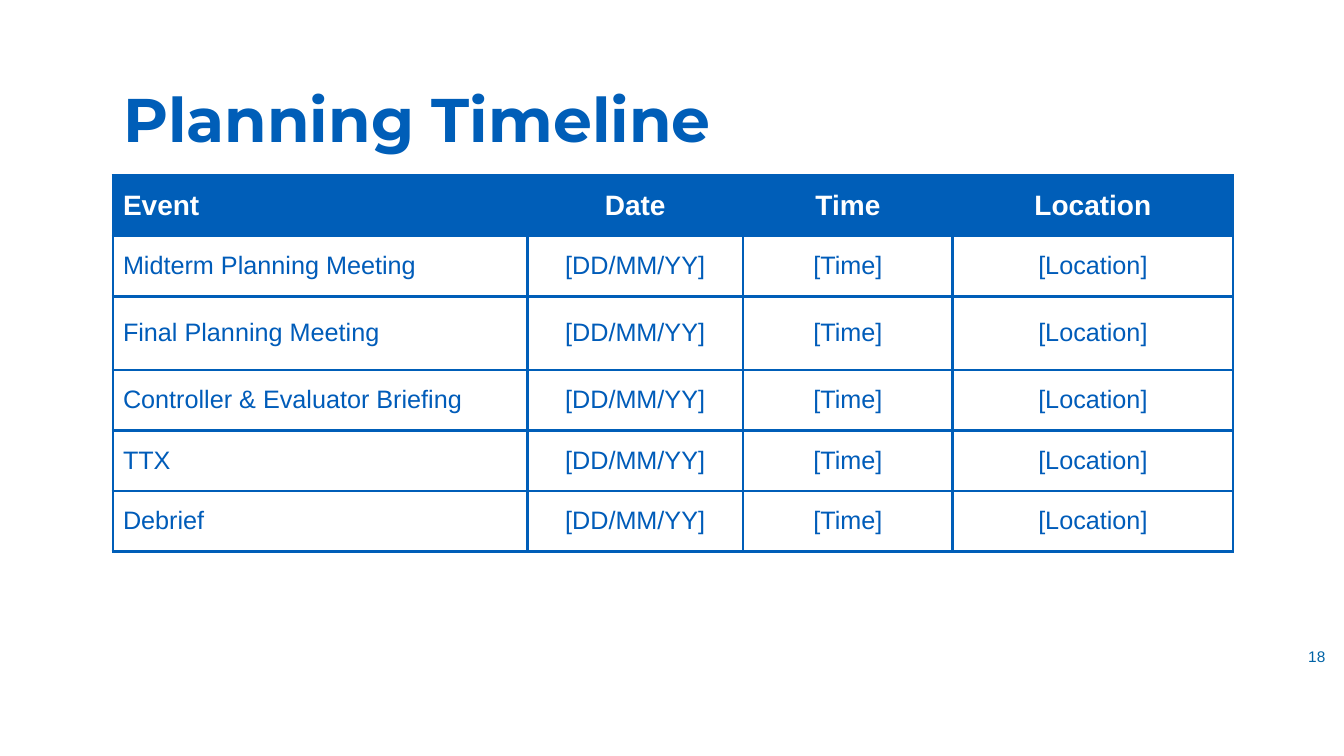
from lxml import etree
from pptx import Presentation
from pptx.dml.color import RGBColor
from pptx.enum.text import MSO_ANCHOR as Anchor, MSO_AUTO_SIZE as AutoSize, PP_ALIGN as Align
from pptx.oxml import parse_xml
from pptx.oxml.ns import nsdecls
from pptx.util import Inches, Pt

BLUE = "005EB8"
TEXT_BLUE = "005CB9"
NUMBER_BLUE = "0063A6"
WHITE = "FFFFFF"

HEADERS = ["Event", "Date", "Time", "Location"]
EVENTS = [
    "Midterm Planning Meeting",
    "Final Planning Meeting",
    "Controller & Evaluator Briefing",
    "TTX",
    "Debrief",
]
DETAILS = ["[DD/MM/YY]", "[Time]", "[Location]"]
COLUMN_WIDTHS = [4.11, 2.14, 2.08, 2.78]
ROW_HEIGHTS = [0.6, 0.6, 0.73, 0.6, 0.6, 0.6]


def color(hex_value):
    return RGBColor.from_string(hex_value)


def write_text(text_frame, text, size, hex_value, font="Arial", bold=False, align=Align.LEFT):
    text_frame.text = text
    paragraph = text_frame.paragraphs[0]
    paragraph.alignment = align
    run_font = paragraph.runs[0].font
    run_font.name = font
    run_font.size = Pt(size)
    run_font.bold = bold
    run_font.color.rgb = color(hex_value)
    return paragraph


def add_borders(cell, hex_value, width):
    properties = cell._tc.get_or_add_tcPr()
    for position, side in enumerate(["lnL", "lnR", "lnT", "lnB"]):
        border = parse_xml(f'<a:{side} {nsdecls("a")} w="{Pt(width)}"/>')
        fill = etree.SubElement(border, border.tag.replace(side, "solidFill"))
        etree.SubElement(fill, border.tag.replace(side, "srgbClr"), val=hex_value)
        properties.insert(position, border)


def add_title(slide, text):
    title = slide.shapes.title
    title.left, title.top = Inches(1.12), Inches(0.49)
    title.width, title.height = Inches(11.5), Inches(1.45)
    paragraph = write_text(title.text_frame, text, 44, BLUE, "Montserrat", True)
    paragraph.line_spacing = 0.9
    title.text_frame.vertical_anchor = Anchor.MIDDLE
    title.text_frame.word_wrap = True
    title.text_frame.auto_size = AutoSize.NONE


def add_timeline_table(slide):
    rows = [HEADERS] + [[event] + DETAILS for event in EVENTS]
    frame = slide.shapes.add_table(
        len(rows), len(HEADERS), Inches(1.12), Inches(1.74),
        Inches(sum(COLUMN_WIDTHS)), Inches(sum(ROW_HEIGHTS)))
    table = frame.table
    for column, width in zip(table.columns, COLUMN_WIDTHS):
        column.width = Inches(width)
    for row, height in zip(table.rows, ROW_HEIGHTS):
        row.height = Inches(height)
    for row_index, texts in enumerate(rows):
        is_header = row_index == 0
        for column_index, text in enumerate(texts):
            cell = table.cell(row_index, column_index)
            cell.fill.solid()
            cell.fill.fore_color.rgb = color(BLUE if is_header else WHITE)
            cell.vertical_anchor = Anchor.MIDDLE
            write_text(
                cell.text_frame, text,
                size=20 if is_header else 18,
                hex_value=WHITE if is_header else TEXT_BLUE,
                bold=is_header,
                align=Align.CENTER if column_index else Align.LEFT)
            add_borders(cell, BLUE, 2.25)


def add_slide_number(slide, number):
    box = slide.shapes.add_textbox(Inches(12.79), Inches(6.31), Inches(0.54), Inches(0.41))
    box.text_frame.word_wrap = True
    box.text_frame.vertical_anchor = Anchor.MIDDLE
    write_text(box.text_frame, number, 11, NUMBER_BLUE, align=Align.CENTER)


def main():
    presentation = Presentation()
    presentation.slide_width = Inches(13.33)
    presentation.slide_height = Inches(7.5)
    slide = presentation.slides.add_slide(presentation.slide_layouts[5])
    add_slide_number(slide, "18")
    add_timeline_table(slide)
    add_title(slide, "Planning Timeline")
    presentation.save("out.pptx")


if __name__ == "__main__":
    main()
